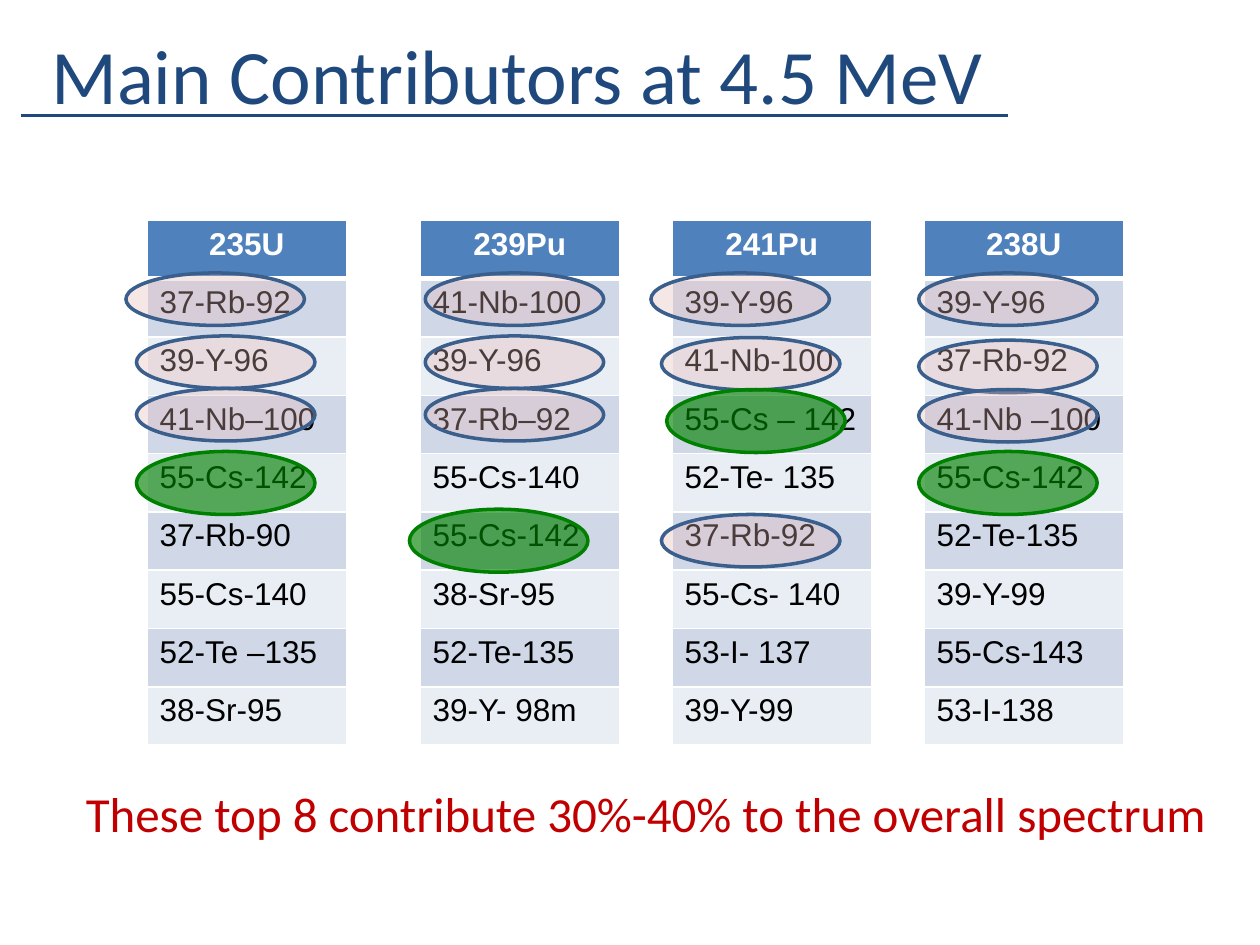
from dataclasses import dataclass

from lxml import etree
from pptx import Presentation
from pptx.dml.color import RGBColor
from pptx.enum.shapes import MSO_CONNECTOR, MSO_SHAPE
from pptx.enum.text import MSO_AUTO_SIZE, PP_ALIGN
from pptx.oxml.ns import qn
from pptx.util import Inches, Pt

ELLIPSE = MSO_SHAPE.OVAL
STRAIGHT = MSO_CONNECTOR.STRAIGHT
CENTER = PP_ALIGN.CENTER
LEFT = PP_ALIGN.LEFT
GROW = MSO_AUTO_SIZE.SHAPE_TO_FIT_TEXT

SLIDE_WIDTH, SLIDE_HEIGHT = 10, 7.5
GRID_COLUMNS, GRID_ROWS = 120, 90


@dataclass(frozen=True)
class Theme:
    title: str = "1F497D"
    conclusion: str = "C00000"
    header: str = "4F81BD"
    bands: tuple = ("D0D8E8", "E9EDF4")
    white: str = "FFFFFF"
    black: str = "000000"
    text_font: str = "Calibri"
    table_font: str = "Arial"
    title_size: int = 44
    conclusion_size: int = 28
    table_size: int = 18
    rule_width: float = 2.25
    marker_width: int = 2
    border_width: int = 1
    header_border_width: int = 3


@dataclass(frozen=True)
class Marker:
    fill: str
    opacity: int
    line: str
    width: float
    height: float


class SlideBuilder:
    def __init__(self, slide, theme):
        self.slide = slide
        self.theme = theme

    def across(self, columns):
        return Inches(columns * SLIDE_WIDTH / GRID_COLUMNS)

    def down(self, rows):
        return Inches(rows * SLIDE_HEIGHT / GRID_ROWS)

    def box(self, left, top, width, height):
        return self.across(left), self.down(top), self.across(width), self.down(height)

    def style(self, paragraph, font_name, size, color, bold=False):
        for run in paragraph.runs:
            run.font.name = font_name
            run.font.size = Pt(size)
            run.font.bold = bold
            run.font.color.rgb = RGBColor.from_string(color)

    def text(self, place, words, size, color, indent=0.1):
        text_frame = self.slide.shapes.add_textbox(*self.box(*place)).text_frame
        text_frame.word_wrap = True
        text_frame.auto_size = GROW
        text_frame.margin_left = Inches(indent)
        text_frame.text = words
        self.style(text_frame.paragraphs[0], self.theme.text_font, size, color)

    def rule(self, left, right, row, color):
        line = self.slide.shapes.add_connector(
            STRAIGHT, self.across(left), self.down(row), self.across(right), self.down(row)
        )
        line.line.color.rgb = RGBColor.from_string(color)
        line.line.width = Pt(self.theme.rule_width)
        etree.SubElement(line._element.spPr, qn("a:effectLst"))

    def border(self, cell, side, width):
        properties = cell._tc.get_or_add_tcPr()
        edge = etree.SubElement(properties, qn(f"a:ln{side}"), w=str(Pt(width)))
        fill = etree.SubElement(edge, qn("a:solidFill"))
        etree.SubElement(fill, qn("a:srgbClr"), val=self.theme.white)

    def table(self, place, entries):
        theme = self.theme
        table = self.slide.shapes.add_table(len(entries), 1, *self.box(*place)).table
        for index, entry in enumerate(entries):
            cell = table.cell(index, 0)
            is_header = index == 0
            bottom = theme.header_border_width if is_header else theme.border_width
            self.border(cell, "L", theme.border_width)
            self.border(cell, "R", theme.border_width)
            if is_header:
                self.border(cell, "T", theme.border_width)
            self.border(cell, "B", bottom)
            cell.fill.solid()
            color = theme.header if is_header else theme.bands[(index - 1) % 2]
            cell.fill.fore_color.rgb = RGBColor.from_string(color)
            cell.text = entry
            paragraph = cell.text_frame.paragraphs[0]
            paragraph.alignment = CENTER if is_header else LEFT
            text_color = theme.white if is_header else theme.black
            self.style(paragraph, theme.table_font, theme.table_size, text_color, is_header)

    def markers(self, marker, positions):
        group = self.slide.shapes.add_group_shape()
        for left, top in positions:
            shape = group.shapes.add_shape(
                ELLIPSE, *self.box(left, top, marker.width, marker.height)
            )
            shape.shadow.inherit = False
            shape.fill.solid()
            shape.fill.fore_color.rgb = RGBColor.from_string(marker.fill)
            color = shape._element.spPr.find(qn("a:solidFill"))[0]
            etree.SubElement(color, qn("a:alpha"), val=str(marker.opacity * 1000))
            shape.line.color.rgb = RGBColor.from_string(marker.line)
            shape.line.width = Pt(self.theme.marker_width)


ISOTOPE_TABLES = {
    14: ["235U", "37-Rb-92", "39-Y-96", "41-Nb–100", "55-Cs-142",
         "37-Rb-90", "55-Cs-140", "52-Te –135", "38-Sr-95"],
    40: ["239Pu", "41-Nb-100", "39-Y-96", "37-Rb–92", "55-Cs-140",
         "55-Cs-142", "38-Sr-95", "52-Te-135", "39-Y- 98m"],
    64: ["241Pu", "39-Y-96", "41-Nb-100", "55-Cs – 142", "52-Te- 135",
         "37-Rb-92", "55-Cs- 140", "53-I- 137", "39-Y-99"],
    88: ["238U", "39-Y-96", "37-Rb-92", "41-Nb –100", "55-Cs-142",
         "52-Te-135", "39-Y-99", "55-Cs-143", "53-I-138"],
}

SHARED_MARKER = Marker("E6B9B8", 33, "3A5F8C", 17, 5)
SHARED_POSITIONS = [
    (12, 26), (13, 32), (13, 37),
    (40.5, 26), (40.5, 32), (40.5, 37),
    (62, 26), (63, 32.15), (63, 49),
    (87.5, 26), (87.5, 32.4), (87.5, 37.1),
]
CESIUM_MARKER = Marker("008000", 64, "008000", 17, 6)
CESIUM_POSITIONS = [(13, 43), (39, 48.5), (63.5, 37.1), (87.5, 43)]


def main():
    presentation = Presentation()
    presentation.slide_width = Inches(SLIDE_WIDTH)
    presentation.slide_height = Inches(SLIDE_HEIGHT)
    theme = Theme()
    slide = presentation.slides.add_slide(presentation.slide_layouts[6])
    builder = SlideBuilder(slide, theme)

    for left, entries in ISOTOPE_TABLES.items():
        builder.table((left, 21, 19, 50), entries)
    builder.text((2, 2, 112.2, 10.1), "Main Contributors at 4.5 MeV",
                 theme.title_size, theme.title, indent=0.24)
    builder.rule(2, 96, 11, theme.title)
    builder.markers(SHARED_MARKER, SHARED_POSITIONS)
    builder.text((7, 74, 110.2, 6.8), "These top 8 contribute 30%-40% to the overall spectrum",
                 theme.conclusion_size, theme.conclusion)
    builder.markers(CESIUM_MARKER, CESIUM_POSITIONS)
    presentation.save("out.pptx")


if __name__ == "__main__":
    main()
